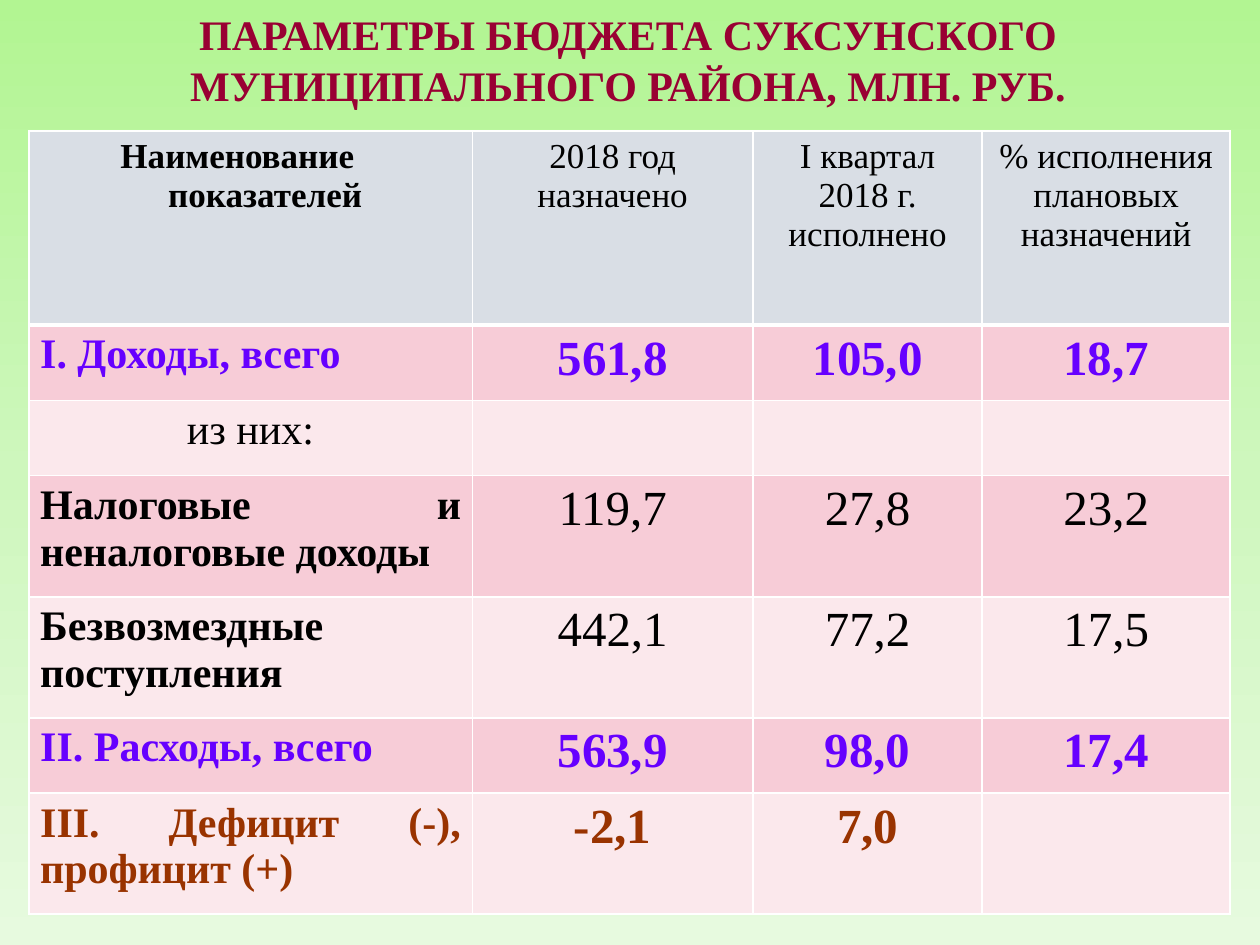
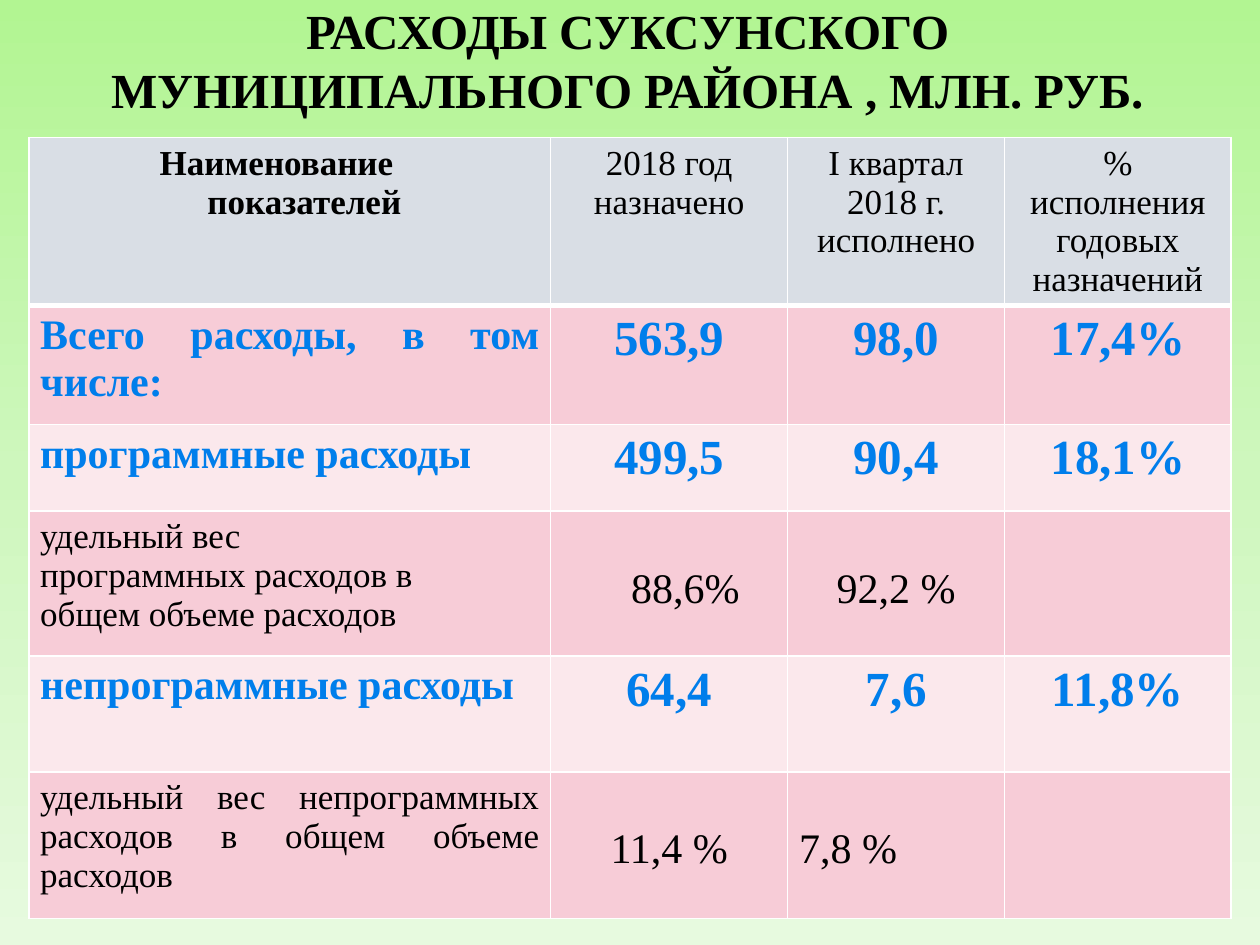
from lxml import etree
from pptx import Presentation
from pptx.dml.color import RGBColor
from pptx.enum.text import MSO_ANCHOR, MSO_AUTO_SIZE, PP_ALIGN
from pptx.oxml.ns import qn
from pptx.util import Cm, Pt

CENTER, LEFT, JUST = PP_ALIGN.CENTER, PP_ALIGN.LEFT, PP_ALIGN.JUSTIFY
MIDDLE, NO_FIT = MSO_ANCHOR.MIDDLE, MSO_AUTO_SIZE.NONE

FONT = "Times New Roman"
BLACK = RGBColor(0x00, 0x00, 0x00)
WHITE = RGBColor(0xFF, 0xFF, 0xFF)
WINE = RGBColor(0x99, 0x00, 0x33)
VIOLET = RGBColor(0x66, 0x00, 0xFF)
BROWN = RGBColor(0x99, 0x33, 0x00)
BLUE = RGBColor(0x00, 0x7E, 0xEB)
GREY = RGBColor(0xD9, 0xDE, 0xE5)
PINK = RGBColor(0xF7, 0xCC, 0xD7)
PALE = RGBColor(0xFB, 0xE8, 0xEC)
GREENS = ((0, RGBColor(0xB2, 0xF5, 0x92)),
          (50, RGBColor(0xCE, 0xF7, 0xBD)),
          (100, RGBColor(0xE7, 0xFA, 0xDF)))

SIDE = 0.58
PAD_X, PAD_Y = 0.23, 0.13
NAME_GAP = 0.53    # extra right margin of the name heading
NAME_STEP = 1.12   # indent of its second line
LINE_DROP = 0.97   # one 24 pt line

NAME = ("Наименование", "показателей")
QUARTER = "I квартал 2018 г. исполнено"


def paint(master):
    """Give the master the green gradient, from top to bottom."""
    fill = master.background.fill
    fill.gradient()
    fill.gradient_angle = 270
    stops = master.element.find(".//" + qn("a:gsLst"))
    for stop in list(stops):
        stops.remove(stop)
    for pos, color in GREENS:
        stop = etree.SubElement(stops, qn("a:gs"), pos=str(pos * 1000))
        etree.SubElement(stop, qn("a:srgbClr"), val=str(color))


def write(frame, text, size=24, color=BLACK, bold=False, align=CENTER):
    """Fill a frame; a tuple of strings gives one paragraph each."""
    lines = (text,) if isinstance(text, str) else text
    for i, line in enumerate(lines):
        para = frame.add_paragraph() if i else frame.paragraphs[0]
        para.alignment = align
        run = para.add_run()
        run.text = line
        font = run.font
        font.name, font.size, font.bold = FONT, Pt(size), bold
        font.color.rgb = color


def edge(cell, base=1):
    """Draw the white borders; base is the width of the bottom one."""
    props = cell._tc.get_or_add_tcPr()
    for tag, width in (("lnL", 1), ("lnR", 1), ("lnT", 1), ("lnB", base)):
        line = etree.SubElement(props, qn("a:" + tag), w=str(Pt(width)))
        fill = etree.SubElement(line, qn("a:solidFill"))
        etree.SubElement(fill, qn("a:srgbClr"), val=str(WHITE))


def add_title(slide, text, size, color):
    title = slide.shapes.title
    title.left, title.top = Cm(SIDE), Cm(0)
    title.width, title.height = Cm(24.16), Cm(2.39)
    frame = title.text_frame
    frame.word_wrap = True
    frame.auto_size = NO_FIT
    frame.vertical_anchor = MIDDLE
    write(frame, text, size=size, color=color, bold=True)


def add_grid(slide, top, cols, rows):
    """Add the table with its borders and row fills, without text."""
    shape = slide.shapes.add_table(len(rows), len(cols), Cm(SIDE), Cm(top),
                                   Cm(sum(cols)), Cm(sum(rows)))
    table = shape.table
    table.horz_banding = False
    for col, width in zip(table.columns, cols):
        col.width = Cm(width)
    for i, (row, height) in enumerate(zip(table.rows, rows)):
        row.height = Cm(height)
        for cell in row.cells:
            edge(cell, base=1 if i else 3)
            cell.fill.solid()
            cell.fill.fore_color.rgb = (PINK if i % 2 else PALE) if i else GREY
            cell.margin_left = cell.margin_right = Cm(PAD_X)
            cell.margin_top = cell.margin_bottom = Cm(PAD_Y)
    return table


def fill_head(table, heads):
    name = table.cell(0, 0)
    name.margin_right = Cm(PAD_X + NAME_GAP)
    write(name.text_frame, NAME, size=20, bold=True)
    props = name.text_frame.paragraphs[1]._p.get_or_add_pPr()
    props.set("marL", str(Cm(NAME_STEP)))
    props.set("indent", "0")
    for j, head in enumerate(heads, 1):
        write(table.cell(0, j).text_frame, head, size=20)


def fill_row(table, i, label, values, name, number):
    """Write a row; name and number are the formats of its two parts."""
    write(table.cell(i, 0).text_frame, label, **name)
    for j, value in enumerate(values, 1):
        write(table.cell(i, j).text_frame, value, **number)


def add_budget(slide):
    add_title(slide, "ПАРАМЕТРЫ БЮДЖЕТА СУКСУНСКОГО МУНИЦИПАЛЬНОГО РАЙОНА, "
              "МЛН. РУБ.", 24, WINE)
    table = add_grid(slide, 2.64, (8.94, 5.66, 4.62, 5.0),
                     (3.91, 1.52, 1.52, 2.44, 2.44, 1.52, 2.44))
    fill_head(table, ("2018 год назначено", QUARTER,
                      ("% исполнения", "плановых назначений")))
    rows = (
        ("I. Доходы, всего", ("561,8", "105,0", "18,7"), VIOLET, True),
        ("из них:", (), BLACK, False),
        ("Налоговые и неналоговые доходы", ("119,7", "27,8", "23,2"),
         BLACK, False),
        ("Безвозмездные поступления", ("442,1", "77,2", "17,5"),
         BLACK, False),
        ("II. Расходы, всего", ("563,9", "98,0", "17,4"), VIOLET, True),
        ("III. Дефицит (-), профицит (+)", ("-2,1", "7,0"), BROWN, True),
    )
    for i, (label, values, color, bold) in enumerate(rows, 1):
        name = dict(color=color, bold=bool(values),
                    align=JUST if values else CENTER)
        fill_row(table, i, label, values, name,
                 dict(size=28, color=color, bold=bold))


def add_costs(slide):
    add_title(slide, "РАСХОДЫ СУКСУНСКОГО МУНИЦИПАЛЬНОГО РАЙОНА , МЛН. РУБ.",
              28, BLACK)
    table = add_grid(slide, 2.77, (10.52, 4.78, 4.37, 4.57),
                     (3.2, 2.39, 1.75, 2.92, 2.34, 2.95))
    fill_head(table, (("2018 год", "назначено"), QUARTER,
                      ("% исполнения", "годовых назначений")))
    sums = (
        (1, "Всего расходы, в том числе:", ("563,9", "98,0", "17,4%")),
        (2, "программные расходы", ("499,5", "90,4", "18,1%")),
        (4, "непрограммные расходы", ("64,4", "7,6", "11,8%")),
    )
    for i, label, values in sums:
        fill_row(table, i, label, values,
                 dict(color=BLUE, bold=True, align=JUST),
                 dict(size=28, color=BLUE, bold=True))
    shares = (
        (3, ("удельный вес", "программных расходов в",
             "общем объеме расходов"), ("88,6%", "92,2 %")),
        (5, "удельный вес непрограммных расходов в общем объеме расходов",
         ("11,4 %", "7,8 %")),
    )
    for i, label, values in shares:
        fill_row(table, i, label, values, dict(size=20, align=JUST), {})
        for j in (1, 2):
            table.cell(i, j).margin_top = Cm(PAD_Y + LINE_DROP)
    table.cell(3, 1).margin_left = Cm(PAD_X + 0.65)
    table.cell(5, 2).text_frame.paragraphs[0].alignment = LEFT


def main():
    deck = Presentation()
    deck.slide_width, deck.slide_height = Cm(25.4), Cm(19.05)
    paint(deck.slide_master)
    for build in (add_budget, add_costs):
        build(deck.slides.add_slide(deck.slide_layouts[5]))
    deck.save("out.pptx")


if __name__ == "__main__":
    main()
